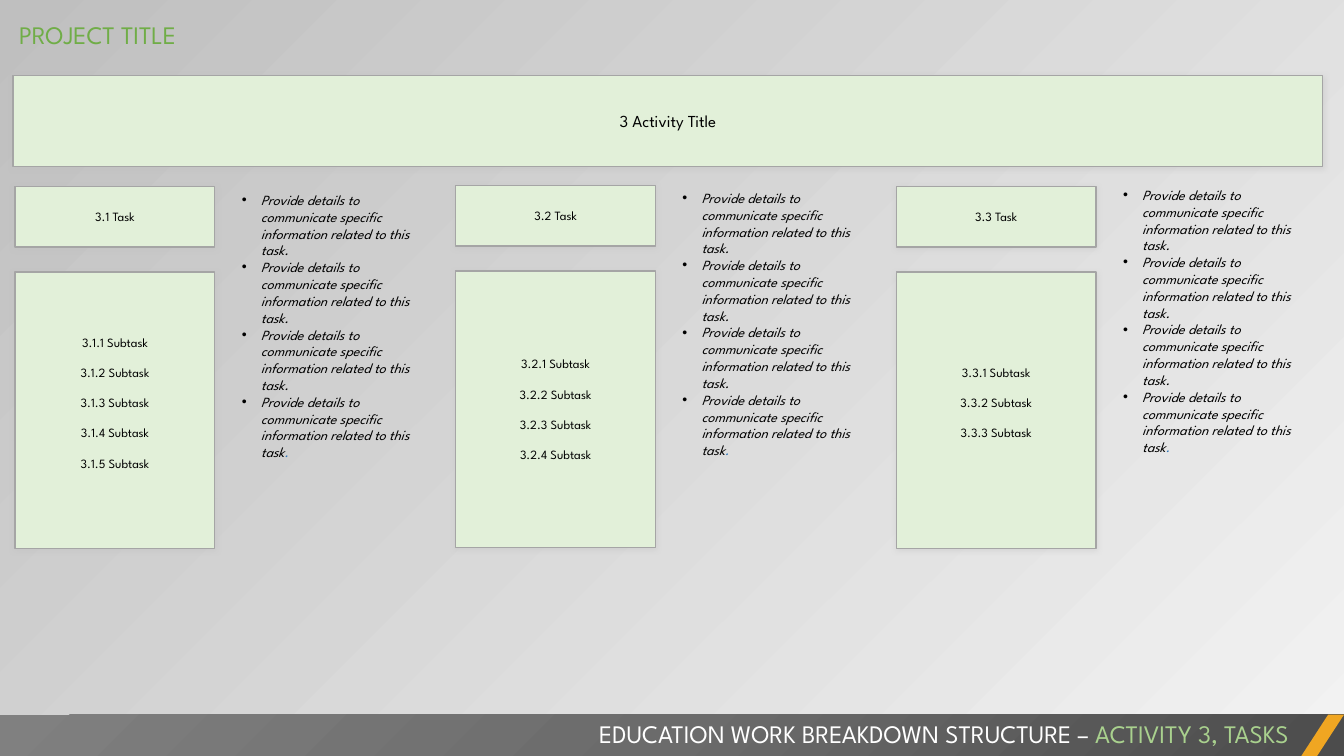
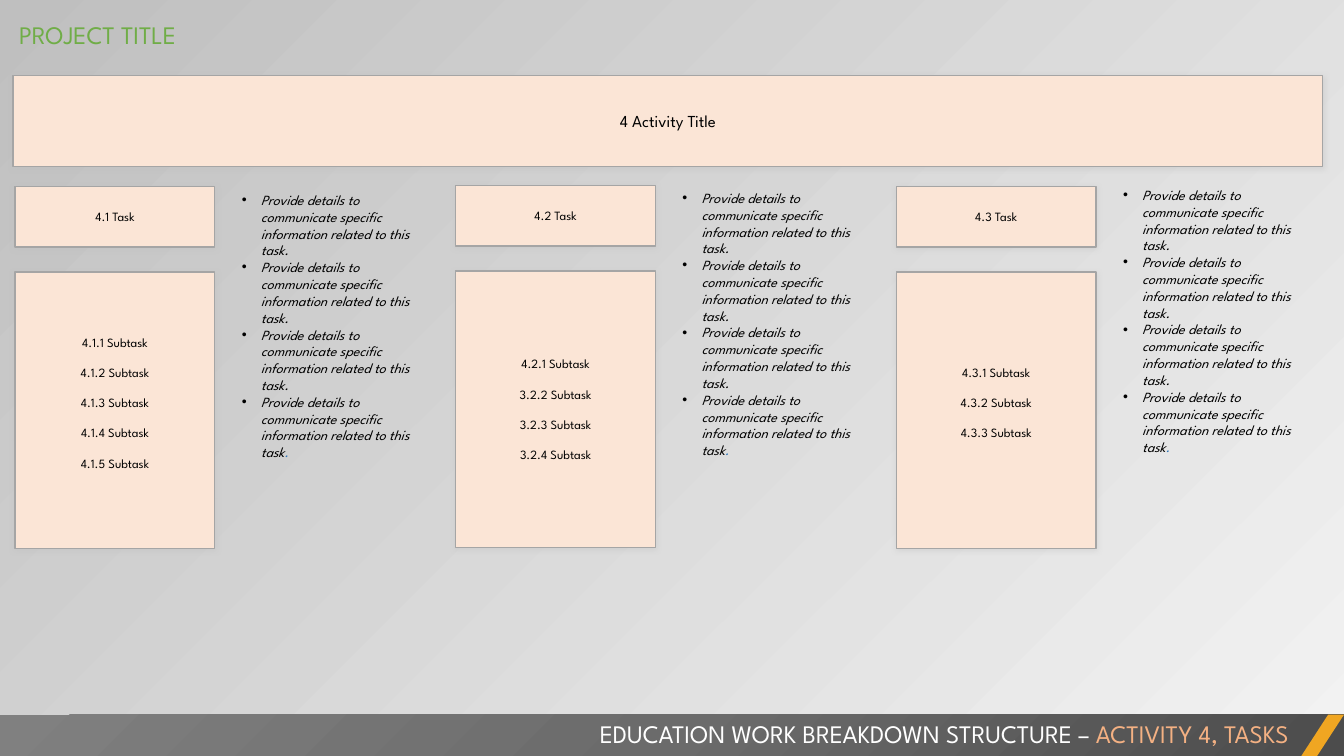
from lxml import etree
from pptx import Presentation
from pptx.dml.color import RGBColor
from pptx.enum import shapes, text
from pptx.oxml import parse_xml
from pptx.oxml.ns import nsdecls, qn
from pptx.util import Inches, Pt

FONT = "League Spartan"
BLACK = RGBColor(0x00, 0x00, 0x00)
WHITE = RGBColor(0xFF, 0xFF, 0xFF)
PALE = RGBColor(0xF2, 0xF2, 0xF2)
SILVER = RGBColor(0xBF, 0xBF, 0xBF)
GRAY = RGBColor(0xA5, 0xA5, 0xA5)
IRON = RGBColor(0x4C, 0x4C, 0x4C)
STEEL = RGBColor(0x6B, 0x6B, 0x6B)
ASH = RGBColor(0x80, 0x80, 0x80)
GOLD = RGBColor(0xF0, 0xA6, 0x22)
BLUE = RGBColor(0x2E, 0x75, 0xB6)
GREEN = RGBColor(0x70, 0xAD, 0x47)
MINT = RGBColor(0xE2, 0xF0, 0xD9)
LEAF = RGBColor(0xA9, 0xD1, 0x8E)
PEACH = RGBColor(0xFB, 0xE5, 0xD6)
CORAL = RGBColor(0xF4, 0xB1, 0x83)

RECT = shapes.MSO_SHAPE.RECTANGLE
SLANT = shapes.MSO_SHAPE.PARALLELOGRAM
LEFT, STEP = 0.15, 4.37
TOPS = [(1.85, 1.85), (1.84, 1.83), (1.85, 1.80)]
DETAIL = "Provide details to communicate specific information related to this task"

PAGES = [
    (3, MINT, LEAF, [
        ["3.1.1", "3.1.2", "3.1.3", "3.1.4", "3.1.5"],
        ["3.2.1", "3.2.2", "3.2.3", "3.2.4"],
        ["3.3.1", "3.3.2", "3.3.3"],
    ]),
    (4, PEACH, CORAL, [
        ["4.1.1", "4.1.2", "4.1.3", "4.1.4", "4.1.5"],
        ["4.2.1", "3.2.2", "3.2.3", "3.2.4"],
        ["4.3.1", "4.3.2", "4.3.3"],
    ]),
]
LIFTS = [0.15, 0, 0.15]


def style(para, size, color, align=text.PP_ALIGN.LEFT, italic=False):
    para.alignment = align
    font = para.font
    font.name, font.size, font.italic = FONT, Pt(size), italic
    font.color.rgb = color


def add_run(para, words, color=None):
    run = para.add_run()
    run.text = words
    if color is not None:
        run.font.color.rgb = color


def add_paras(frame, count):
    return [frame.paragraphs[0]] + [frame.add_paragraph() for _ in range(count - 1)]


def add_form(slide, kind, box, fill):
    form = slide.shapes.add_shape(kind, *map(Inches, box))
    form.shadow.inherit = False
    form.fill.solid()
    form.fill.fore_color.rgb = fill
    form.line.fill.background()
    return form


def add_text(slide, box):
    frame = slide.shapes.add_textbox(*map(Inches, box)).text_frame
    frame.word_wrap = True
    return frame


def add_glow(form):
    effects = form._element.spPr.find(qn("a:effectLst"))
    effects.append(parse_xml(
        f'<a:outerShdw {nsdecls("a")} blurRad="{Pt(4)}" dist="{Pt(1)}" dir="5400000" '
        f'algn="t" rotWithShape="0"><a:srgbClr val="{SILVER}">'
        '<a:alpha val="40000"/></a:srgbClr></a:outerShdw>'))


def add_card(slide, box, fill, lines, size, lift=0):
    card = add_form(slide, RECT, box, fill)
    card.line.color.rgb = GRAY
    card.line.width = Pt(1)
    add_glow(card)
    frame = card.text_frame
    frame.word_wrap = True
    frame.vertical_anchor = text.MSO_ANCHOR.MIDDLE
    frame.margin_bottom = Inches(0.05 + lift)
    for i, (para, line) in enumerate(zip(add_paras(frame, len(lines)), lines)):
        style(para, size, BLACK, text.PP_ALIGN.CENTER)
        para.space_before = Pt(10.8 if i else 0)
        add_run(para, line)


def add_bullet(para):
    props = para._p.get_or_add_pPr()
    props.set("marL", str(Inches(0.19)))
    props.set("indent", str(-Inches(0.19)))
    mark = etree.Element(qn("a:buChar"), char="•")
    face = etree.Element(qn("a:buFont"), typeface="Arial")
    props.find(qn("a:defRPr")).addprevious(face)
    face.addnext(mark)


def add_notes(slide, left, top):
    paras = add_paras(add_text(slide, (left, top, 2.06, 3)), 4)
    for para in paras:
        style(para, 10, BLACK, italic=True)
        add_bullet(para)
        add_run(para, DETAIL)
        add_run(para, ".", BLUE if para is paras[-1] else None)


def add_band(slide):
    band = add_form(slide, RECT, (0, 7.09, 13.33, 0.42), STEEL)
    stops = "".join(
        f'<a:gs pos="{pos}"><a:srgbClr val="{color}"/></a:gs>'
        for pos, color in ((0, IRON), (50000, STEEL), (100000, ASH)))
    props = band._element.spPr
    props.replace(props.find(qn("a:solidFill")), parse_xml(
        f'<a:gradFill {nsdecls("a")} rotWithShape="1"><a:gsLst>{stops}</a:gsLst>'
        '<a:path path="circle"><a:fillToRect l="100000" t="100000"/></a:path></a:gradFill>'))
    add_form(slide, SLANT, (12.9, 7.09, 0.43, 0.42), GOLD).adjustments[0] = 0.65


def add_titles(slide, num, accent):
    para = add_text(slide, (2.97, 7.08, 9.91, 0.4)).paragraphs[0]
    style(para, 18, WHITE, text.PP_ALIGN.RIGHT)
    add_run(para, "EDUCATION WORK BREAKDOWN STRUCTURE – ")
    add_run(para, f"ACTIVITY {num}, TASKS", accent)
    para = add_text(slide, (0.09, 0.14, 10.11, 0.4)).paragraphs[0]
    style(para, 18, GREEN)
    add_run(para, "PROJECT TITLE")


def add_page(deck, num, fill, accent, groups):
    slide = deck.slides.add_slide(deck.slide_layouts[6])
    add_band(slide)
    add_titles(slide, num, accent)
    add_card(slide, (0.13, 0.75, 12.99, 0.9), fill, [f"{num} Activity Title"], 12)
    for i, (codes, (top, note), lift) in enumerate(zip(groups, TOPS, LIFTS)):
        left = LEFT + i * STEP
        add_card(slide, (left, top, 1.98, 0.6), fill, [f"{num}.{i + 1} Task"], 9)
        lines = [f"{code} Subtask" for code in codes]
        add_card(slide, (left, top + 0.85, 1.98, 2.74), fill, lines, 9, lift)
        add_notes(slide, left + 2.15, note)


def set_back(master):
    fill = master.background.fill
    fill.gradient()
    fill.gradient_angle = 135
    for stop, color in zip(fill.gradient_stops, (PALE, SILVER)):
        stop.color.rgb = color


def main():
    deck = Presentation()
    deck.slide_width, deck.slide_height = Inches(13.33), Inches(7.5)
    set_back(deck.slide_master)
    for page in PAGES:
        add_page(deck, *page)
    deck.save("out.pptx")


if __name__ == "__main__":
    main()
